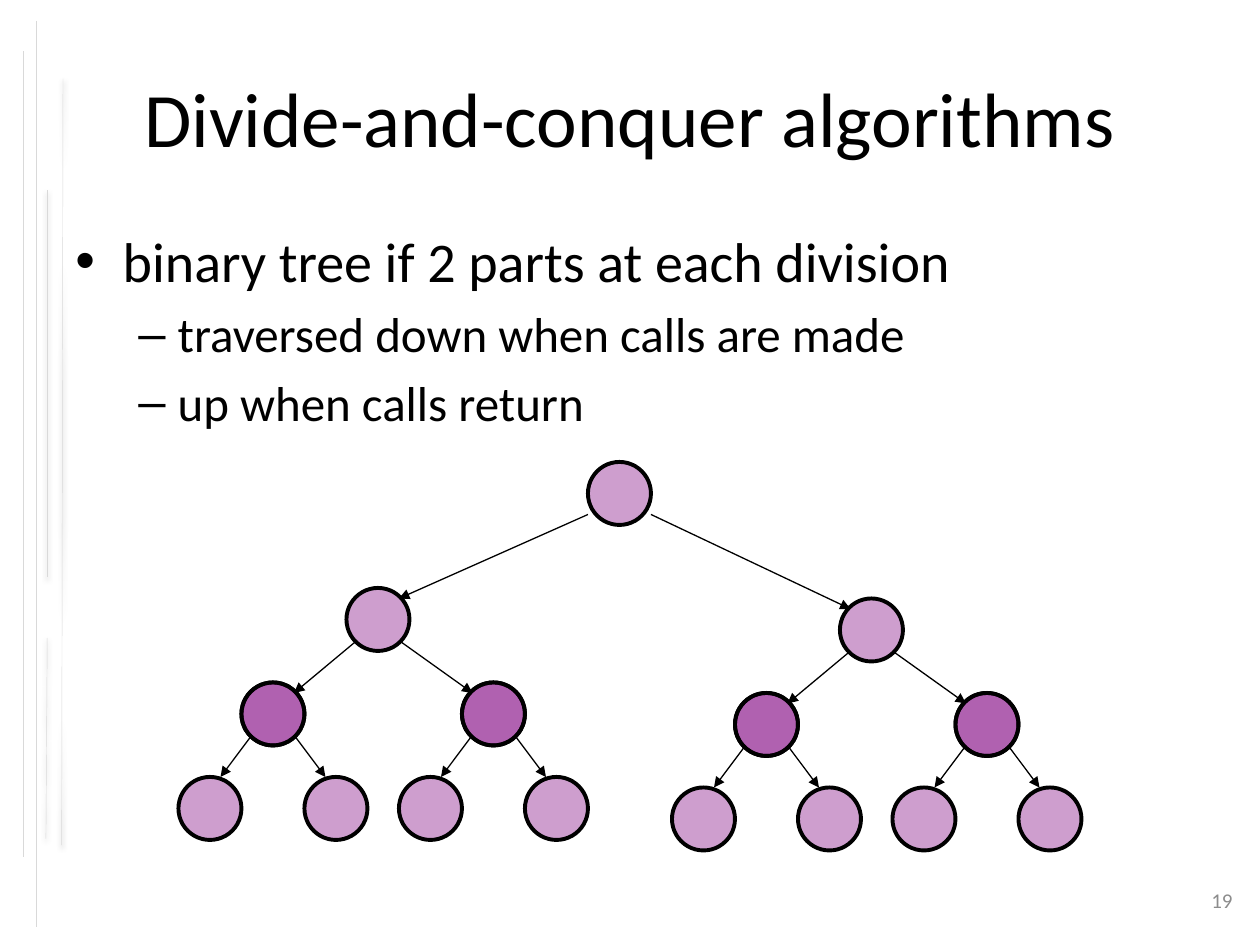
from lxml.etree import SubElement
from pptx import Presentation
from pptx.dml.color import RGBColor
from pptx.enum.shapes import MSO_CONNECTOR as Connector, MSO_SHAPE as Shape
from pptx.enum.text import MSO_ANCHOR as Anchor, PP_ALIGN as Align
from pptx.oxml.ns import qn
from pptx.util import Emu, Pt

BLACK, PURPLE, RULE_GRAY, NUMBER_GRAY = "000000", "800080", "D9D9D9", "8C8C8C"
NODE = 48


def px(value):
    """Turn px (96 to the inch) into EMU."""
    return Emu(value * 9525)


def rgb(color):
    return RGBColor.from_string(color)


def add_xml(parent, tag, **attributes):
    child = SubElement(parent, qn(tag))
    for name, value in attributes.items():
        child.set(name, str(value))
    return child


class SlideBuilder:
    """Holds the style and the slide being filled."""

    font_name = "Calibri"

    def __init__(self, slide):
        self.slide = slide

    def text_frame(self, x, y, width, height, anchor=Anchor.MIDDLE):
        frame = self.slide.shapes.add_textbox(*map(px, (x, y, width, height))).text_frame
        frame.word_wrap = True
        frame.vertical_anchor = anchor
        return frame

    def style_text(self, paragraph, text, size, color=BLACK, align=Align.LEFT):
        paragraph.text = text
        paragraph.alignment = align
        font = paragraph.font
        font.name, font.size = self.font_name, Pt(size)
        font.color.rgb = rgb(color)

    def label(self, text, box, size, color=BLACK):
        paragraph = self.text_frame(*box).paragraphs[0]
        self.style_text(paragraph, text, size, color, Align.CENTER)

    def bullets(self, items, box):
        """Add (text, level) items as a two-level list."""
        styles = [(32, "•", 36, -36), (28, "–", 78, -30)]
        frame = self.text_frame(*box, anchor=Anchor.TOP)
        for index, (text, level) in enumerate(items):
            paragraph = frame.add_paragraph() if index else frame.paragraphs[0]
            size, mark, margin, indent = styles[level]
            paragraph.level = level
            paragraph.space_before = Pt(size * 0.2)
            properties = paragraph._p.get_or_add_pPr()
            properties.set("marL", str(px(margin)))
            properties.set("indent", str(px(indent)))
            add_xml(properties, "a:buFont", typeface="Arial")
            add_xml(properties, "a:buChar", char=mark)
            self.style_text(paragraph, text, size)

    def line(self, start, end, color, width):
        """Draw a straight line; return it with its empty effect list."""
        line = self.slide.shapes.add_connector(
            Connector.STRAIGHT, *map(px, (*start, *end)))
        line.line.color.rgb = rgb(color)
        line.line.width = Pt(width)
        return line, add_xml(line._element.spPr, "a:effectLst")

    def margin_rule(self, start, end):
        _, effects = self.line(start, end, RULE_GRAY, 0.25)
        shadow = add_xml(effects, "a:outerShdw", blurRad=Pt(3.1), dist=Pt(1.6),
                         dir=90 * 60000, rotWithShape=0)
        shadow_color = add_xml(shadow, "a:srgbClr", val=BLACK)
        add_xml(shadow_color, "a:alpha", val=38000)

    def arrow(self, start, end):
        arrow, _ = self.line(start, end, BLACK, 0.75)
        add_xml(arrow.line._get_or_add_ln(), "a:tailEnd", type="triangle")

    def node(self, x, y):
        circle = self.slide.shapes.add_shape(Shape.OVAL, *map(px, (x, y, NODE, NODE)))
        circle.shadow.inherit = False
        circle.fill.solid()
        circle.fill.fore_color.rgb = rgb(PURPLE)
        fill_color = circle._element.spPr.find(qn("a:solidFill"))[0]
        add_xml(fill_color, "a:alpha", val=38000)
        circle.line.color.rgb = rgb(BLACK)
        circle.line.width = Pt(2.25)

    def family(self, parent, child_offsets, arrow_offsets, show_children=True):
        """Draw a parent, its arrows and its children; return the children."""
        def place(offset):
            return parent[0] + offset[0], parent[1] + offset[1]

        children = [place(offset) for offset in child_offsets]
        for member in (parent, *children) if show_children else (parent,):
            self.node(*member)
        for start, end in arrow_offsets:
            self.arrow(place(start), place(end))
        return children


# Offsets from the parent's corner: the children, then each arrow's two ends
ROOT_FAMILY = ([(-184, 96), (192, 104)],
               [((0, 40), (-144, 104)), ((48, 40), (200, 112))])
BRANCH_FAMILY = ([(-80, 72), (88, 72)],
                 [((8, 40), (-40, 80)), ((40, 40), (96, 80))])
LEAF_FAMILY = ([(-48, 72), (48, 72)],
               [((8, 40), (-16, 72)), ((40, 40), (64, 72))])


def main():
    deck = Presentation()
    deck.slide_width, deck.slide_height = px(960), px(720)
    builder = SlideBuilder(deck.slides.add_slide(deck.slide_layouts[6]))

    for start, end in [((48, 60), (47, 644)), ((18, 39), (18, 653)),
                       ((36, 145), (36, 440)), ((28, 16), (28, 706)),
                       ((36, 486), (35, 639))]:
        builder.margin_rule(start, end)

    builder.label("Divide-and-conquer algorithms", (48, 29, 864, 120), 44)
    builder.bullets([("binary tree if 2 parts at each division", 0),
                     ("traversed down when calls are made", 1),
                     ("up when calls return", 1)], (48, 168, 864, 475))

    # Each inner node is drawn by two families, so its translucent fill darkens
    for branch in builder.family((448, 352), *ROOT_FAMILY, show_children=False):
        for inner in builder.family(branch, *BRANCH_FAMILY):
            builder.family(inner, *LEAF_FAMILY)

    builder.label("19", (904, 667, 54, 38), 12, NUMBER_GRAY)
    deck.save("out.pptx")


if __name__ == "__main__":
    main()
